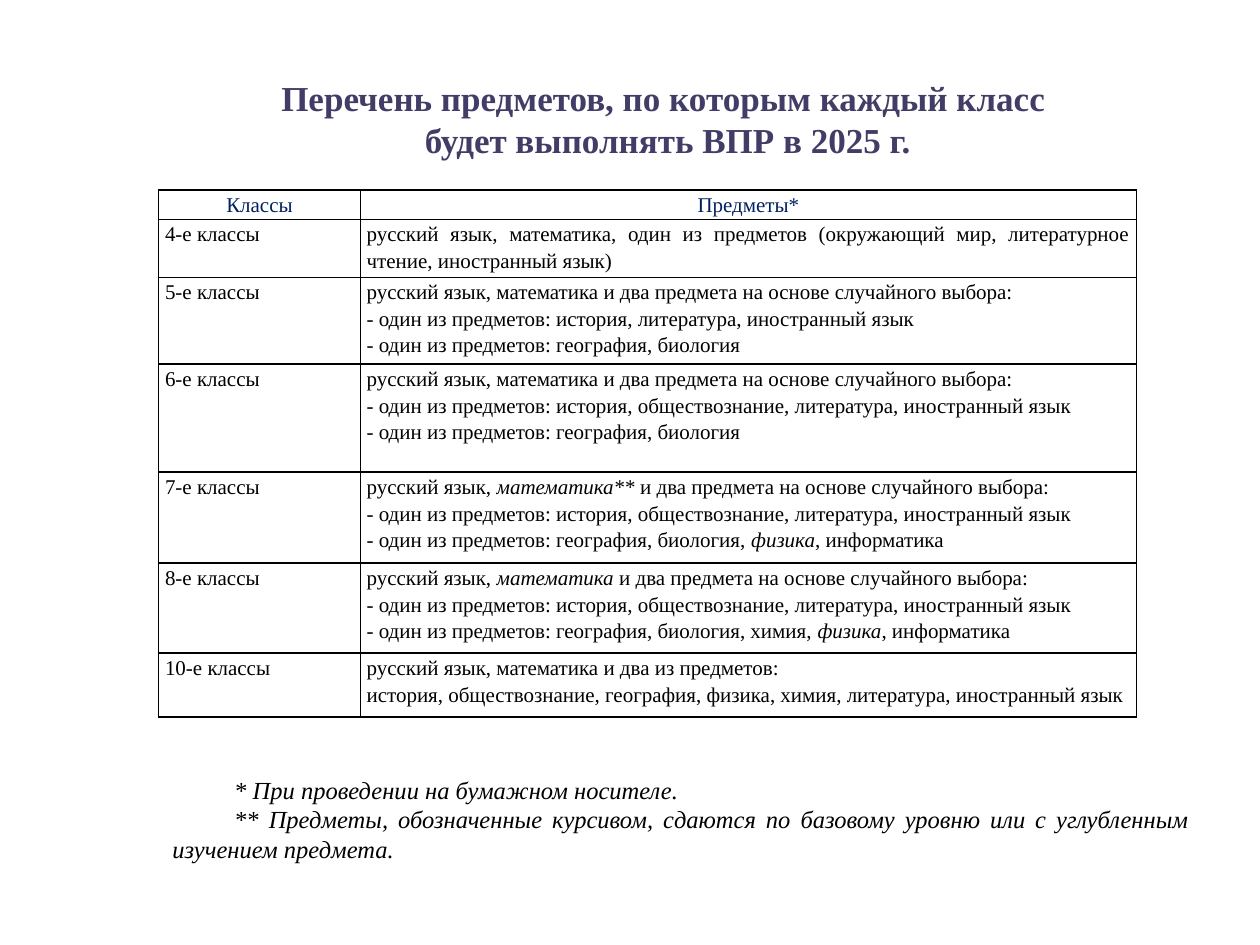
from lxml.etree import SubElement
from pptx import Presentation
from pptx.dml.color import RGBColor
from pptx.enum.text import MSO_ANCHOR as ANCHOR, MSO_AUTO_SIZE as AUTO, PP_ALIGN as ALIGN
from pptx.oxml.ns import qn
from pptx.util import Pt

COLORS = {"title": "423D67", "header": "002060", "text": "000000", "border": "000000"}
FONT = "Times New Roman"

RANDOM_CHOICE = "и два предмета на основе случайного выбора:"
HUMANITIES = "- один из предметов: история, обществознание, литература, иностранный язык"
SCIENCES = "- один из предметов: география, биология"

# Row height, class and subject lines; underscores enclose italic words.
HEADER = (16.6, "Классы", ["Предметы*"])
CLASSES = [
    (33.1, "4-е классы", ["русский язык, математика, один из предметов "
                          "(окружающий мир, литературное чтение, иностранный язык)"]),
    (49.7, "5-е классы", [f"русский язык, математика {RANDOM_CHOICE}",
                          "- один из предметов: история, литература, иностранный язык",
                          SCIENCES]),
    (61.7, "6-е классы", [f"русский язык, математика {RANDOM_CHOICE}", HUMANITIES, SCIENCES]),
    (52, "7-е классы", [f"русский язык, _математика** _{RANDOM_CHOICE}", HUMANITIES,
                        f"{SCIENCES}, _физика_, информатика"]),
    (51.4, "8-е классы", [f"русский язык, _математика_ {RANDOM_CHOICE}", HUMANITIES,
                          f"{SCIENCES}, химия, _физика_, информатика"]),
    (36.6, "10-е классы", ["русский язык, математика и два из предметов:",
                           "история, обществознание, география, физика, химия, "
                           "литература, иностранный язык"]),
]
NOTES = [
    "_* При проведении на бумажном носителе._",
    "_** Предметы, обозначенные курсивом, сдаются по базовому уровню "
    "или с углубленным изучением предмета._",
]


def write(tf, lines, size=12, color="text", bold=False, align=ALIGN.JUSTIFY,
          spacing=None, indent=None):
    """Fill a text frame, one paragraph a line; underscores switch italics."""
    for i, line in enumerate(lines):
        p = tf.paragraphs[0] if i == 0 else tf.add_paragraph()
        p.alignment = align
        if spacing:
            p.line_spacing = spacing
        if indent:
            p._p.get_or_add_pPr().set("indent", str(Pt(indent)))
        for n, part in enumerate(line.split("_")):
            if part:
                r = p.add_run()
                r.text = part
                r.font.name = FONT
                r.font.size = Pt(size)
                r.font.bold = bold
                r.font.italic = n % 2 == 1
                r.font.color.rgb = RGBColor.from_string(COLORS[color])


def add_text_box(s, left, top, width, height, lines, anchor=ANCHOR.TOP, **fmt):
    tf = s.shapes.add_textbox(Pt(left), Pt(top), Pt(width), Pt(height)).text_frame
    tf.word_wrap = True
    tf.auto_size = AUTO.SHAPE_TO_FIT_TEXT
    tf.vertical_anchor = anchor
    write(tf, lines, **fmt)


def set_borders(cell):
    tcPr = cell._tc.get_or_add_tcPr()
    for side in ("lnL", "lnR", "lnT", "lnB"):
        ln = SubElement(tcPr, qn(f"a:{side}"), w=str(Pt(1)))
        fill = SubElement(ln, qn("a:solidFill"))
        SubElement(fill, qn("a:srgbClr"), val=COLORS["border"])


def fill_cell(cell, lines, **fmt):
    cell.margin_left = cell.margin_right = Pt(3.6)
    cell.margin_top = cell.margin_bottom = 0
    set_borders(cell)
    cell.fill.background()
    write(cell.text_frame, lines, spacing=1.15, **fmt)


def add_subject_table(s, left, top, widths):
    rows = [HEADER, *CLASSES]
    height = sum(row[0] for row in rows)
    table = s.shapes.add_table(len(rows), len(widths), Pt(left), Pt(top),
                               Pt(sum(widths)), Pt(height)).table
    table.first_row = table.horz_banding = False
    for column, width in zip(table.columns, widths):
        column.width = Pt(width)
    for i, (row_height, name, subjects) in enumerate(rows):
        table.rows[i].height = Pt(row_height)
        fmt = {"color": "header", "align": ALIGN.CENTER} if i == 0 else {}
        fill_cell(table.cell(i, 0), [name], **fmt)
        fill_cell(table.cell(i, 1), subjects, **fmt)


def main():
    prs = Presentation()
    prs.slide_width, prs.slide_height = Pt(720), Pt(540)
    s = prs.slides.add_slide(prs.slide_layouts[6])
    add_text_box(s, 78.5, 40.3, 606.2, 55.4,
                 ["Перечень предметов, по которым каждый класс ",
                  "будет выполнять ВПР в 2025 г."],
                 size=20, color="title", bold=True, align=ALIGN.CENTER)
    add_subject_table(s, 90.7, 108.7, [115.2, 443.5])
    add_text_box(s, 91.4, 421.9, 595.4, 74.9, NOTES, anchor=ANCHOR.BOTTOM,
                 size=14, indent=35.4)
    prs.save("out.pptx")


if __name__ == "__main__":
    main()
